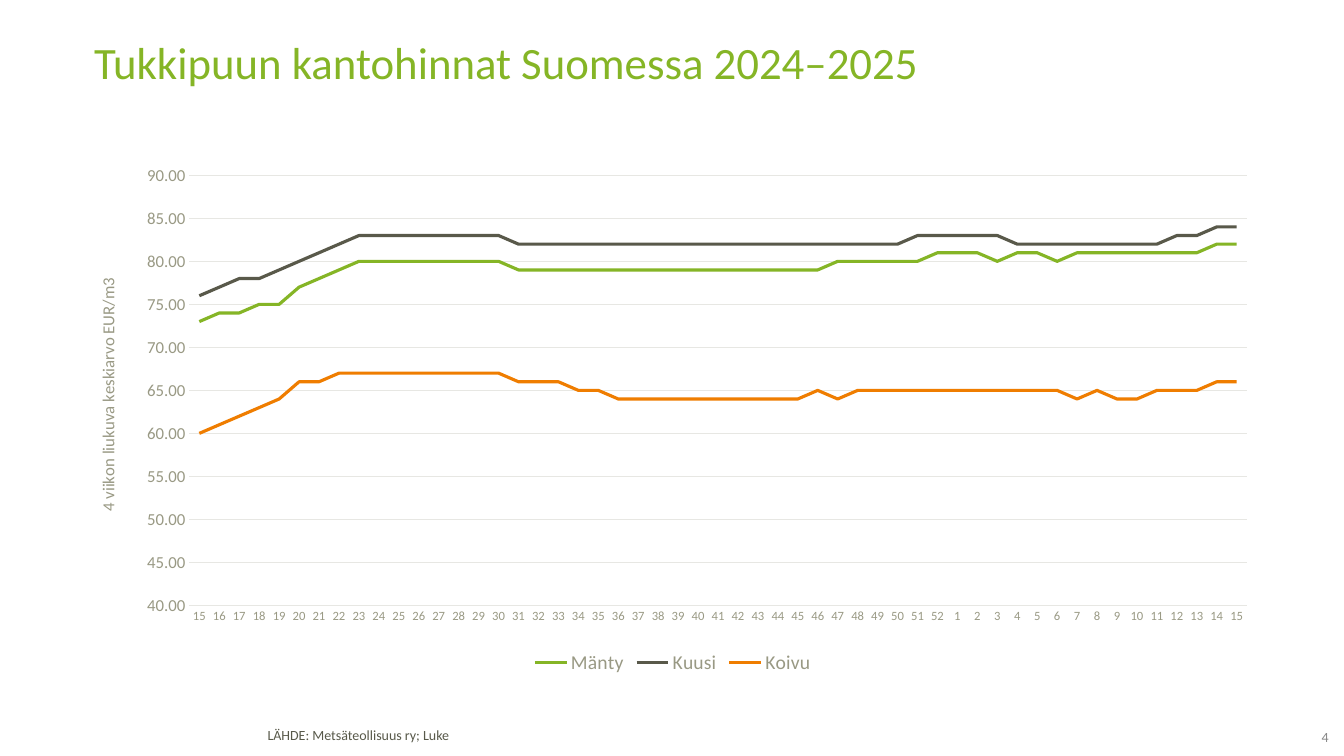
from lxml.etree import SubElement
from pptx import Presentation
from pptx.chart.data import CategoryChartData
from pptx.dml.color import RGBColor
from pptx.enum.chart import XL_CHART_TYPE, XL_LEGEND_POSITION, XL_TICK_MARK
from pptx.enum.text import MSO_ANCHOR, MSO_AUTO_SIZE, PP_ALIGN
from pptx.oxml.ns import qn
from pptx.util import Pt

FONT = "Calibri"
GREEN = RGBColor(0x85, 0xB5, 0x26)
DARK = RGBColor(0x59, 0x59, 0x4A)
SOURCE = RGBColor(0x58, 0x59, 0x4A)
ORANGE = RGBColor(0xEF, 0x7D, 0x00)
LABEL = RGBColor(0x99, 0x99, 0x84)
GRID = RGBColor(0xE7, 0xE7, 0xE3)
GREY = RGBColor(0x87, 0x87, 0x87)

WEEKS = [str(week) for week in [*range(15, 53), *range(1, 16)]]
PLOT_AREA = {"x": 0.09, "y": 0.033, "w": 0.897, "h": 0.826}
PRICES = {
    "Mänty": (GREEN, [
        73, 74, 74, 75, 75, 77, 78, 79, 80, 80, 80, 80, 80, 80, 80, 80, 79, 79,
        79, 79, 79, 79, 79, 79, 79, 79, 79, 79, 79, 79, 79, 79, 80, 80, 80, 80,
        80, 81, 81, 81, 80, 81, 81, 80, 81, 81, 81, 81, 81, 81, 81, 82, 82]),
    "Kuusi": (DARK, [
        76, 77, 78, 78, 79, 80, 81, 82, 83, 83, 83, 83, 83, 83, 83, 83, 82, 82,
        82, 82, 82, 82, 82, 82, 82, 82, 82, 82, 82, 82, 82, 82, 82, 82, 82, 82,
        83, 83, 83, 83, 83, 82, 82, 82, 82, 82, 82, 82, 82, 83, 83, 84, 84]),
    "Koivu": (ORANGE, [
        60, 61, 62, 63, 64, 66, 66, 67, 67, 67, 67, 67, 67, 67, 67, 67, 66, 66,
        66, 65, 65, 64, 64, 64, 64, 64, 64, 64, 64, 64, 64, 65, 64, 65, 65, 65,
        65, 65, 65, 65, 65, 65, 65, 65, 64, 65, 64, 64, 65, 65, 65, 66, 66]),
}


def set_font(font, size, color):
    """Apply the slide font with a size and colour."""
    font.name = FONT
    font.size = Pt(size)
    font.bold = False
    font.color.rgb = color


def write_text(tf, text, size=10, color=SOURCE, align=PP_ALIGN.LEFT, spacing=1.0):
    """Write one formatted paragraph into a text frame."""
    p = tf.paragraphs[0]
    p.alignment = align
    p.line_spacing = spacing
    r = p.add_run()
    r.text = text
    set_font(r.font, size, color)


def add_title(slide, text):
    """Place and fill the title placeholder."""
    sp = slide.shapes.title
    sp.left, sp.top, sp.width, sp.height = Pt(60), Pt(28.5), Pt(842), Pt(70.5)
    tf = sp.text_frame
    tf.auto_size = MSO_AUTO_SIZE.NONE
    tf.vertical_anchor = MSO_ANCHOR.TOP
    write_text(tf, text, size=32, color=GREEN, spacing=0.8)


def add_label(slide, text, left, top, width, height, margins, anchor, **fmt):
    """Add a wrapped text box with the given margins."""
    sp = slide.shapes.add_textbox(Pt(left), Pt(top), Pt(width), Pt(height))
    tf = sp.text_frame
    tf.word_wrap = True
    tf.vertical_anchor = anchor
    tf.margin_left, tf.margin_top, tf.margin_right, tf.margin_bottom = map(Pt, margins)
    write_text(tf, text, **fmt)


def set_plot_area(chart):
    """Fix the inner plot area as fractions of the chart."""
    plot_area = chart.element.find(".//" + qn("c:plotArea"))
    for old in plot_area.findall(qn("c:layout")):
        plot_area.remove(old)
    layout = SubElement(plot_area, qn("c:layout"))
    plot_area.insert(0, layout)
    manual = SubElement(layout, qn("c:manualLayout"))
    settings = {"layoutTarget": "inner", "xMode": "edge", "yMode": "edge", **PLOT_AREA}
    for name, value in settings.items():
        SubElement(manual, qn("c:" + name)).set("val", str(value))


def format_axes(chart):
    """Style both axes, the gridlines and the value title."""
    weeks, prices = chart.category_axis, chart.value_axis
    for axis, size in ((weeks, 9), (prices, 12)):
        axis.major_tick_mark = axis.minor_tick_mark = XL_TICK_MARK.NONE
        set_font(axis.tick_labels.font, size, LABEL)
    prices.minimum_scale, prices.maximum_scale, prices.major_unit = 40, 90, 5
    prices.tick_labels.number_format = "#,##0.00"
    prices.tick_labels.number_format_is_linked = False
    prices.has_major_gridlines = True
    for line in (weeks.format.line, prices.major_gridlines.format.line):
        line.color.rgb = GRID
        line.width = Pt(0.75)
    prices.format.line.fill.background()
    title = prices.axis_title
    write_text(title.text_frame, "4 viikon liukuva keskiarvo EUR/m3",
               size=12, color=LABEL, align=PP_ALIGN.CENTER)
    body = title.element.find(".//" + qn("a:bodyPr"))
    body.set("rot", "-5400000")
    body.set("vert", "horz")


def add_price_chart(slide):
    """Add the line chart of weekly prices."""
    data = CategoryChartData(number_format="#,##0.00")
    data.categories = WEEKS
    for name, (_, values) in PRICES.items():
        data.add_series(name, values)
    chart = slide.shapes.add_chart(XL_CHART_TYPE.LINE, Pt(59.5), Pt(113),
                                   Pt(842), Pt(372), data).chart
    chart.has_title = False
    set_font(chart.font, 10, DARK)
    chart.plots[0].vary_by_categories = False
    for series in chart.plots[0].series:
        series.smooth = False
        series.format.line.color.rgb = PRICES[series.name][0]
        series.format.line.width = Pt(2.25)
    format_axes(chart)
    chart.has_legend = True
    chart.legend.position = XL_LEGEND_POSITION.BOTTOM
    chart.legend.include_in_layout = False
    set_font(chart.legend.font, 14, LABEL)
    set_plot_area(chart)


def main():
    """Build the slide and save it."""
    prs = Presentation()
    prs.slide_width, prs.slide_height = Pt(960), Pt(540)
    slide = prs.slides.add_slide(prs.slide_layouts[5])
    add_label(slide, "LÄHDE: Metsäteollisuus ry; Luke", 184, 517, 517, 19.4,
              (7.2, 3.6, 7.2, 3.6), MSO_ANCHOR.TOP, spacing=0.85)
    add_label(slide, "4", 910.8, 521.3, 38.2, 13.7, (0, 0, 0, 2.9),
              MSO_ANCHOR.MIDDLE, color=GREY, align=PP_ALIGN.RIGHT)
    add_title(slide, "Tukkipuun kantohinnat Suomessa 2024–2025")
    add_price_chart(slide)
    prs.save("out.pptx")


if __name__ == "__main__":
    main()
